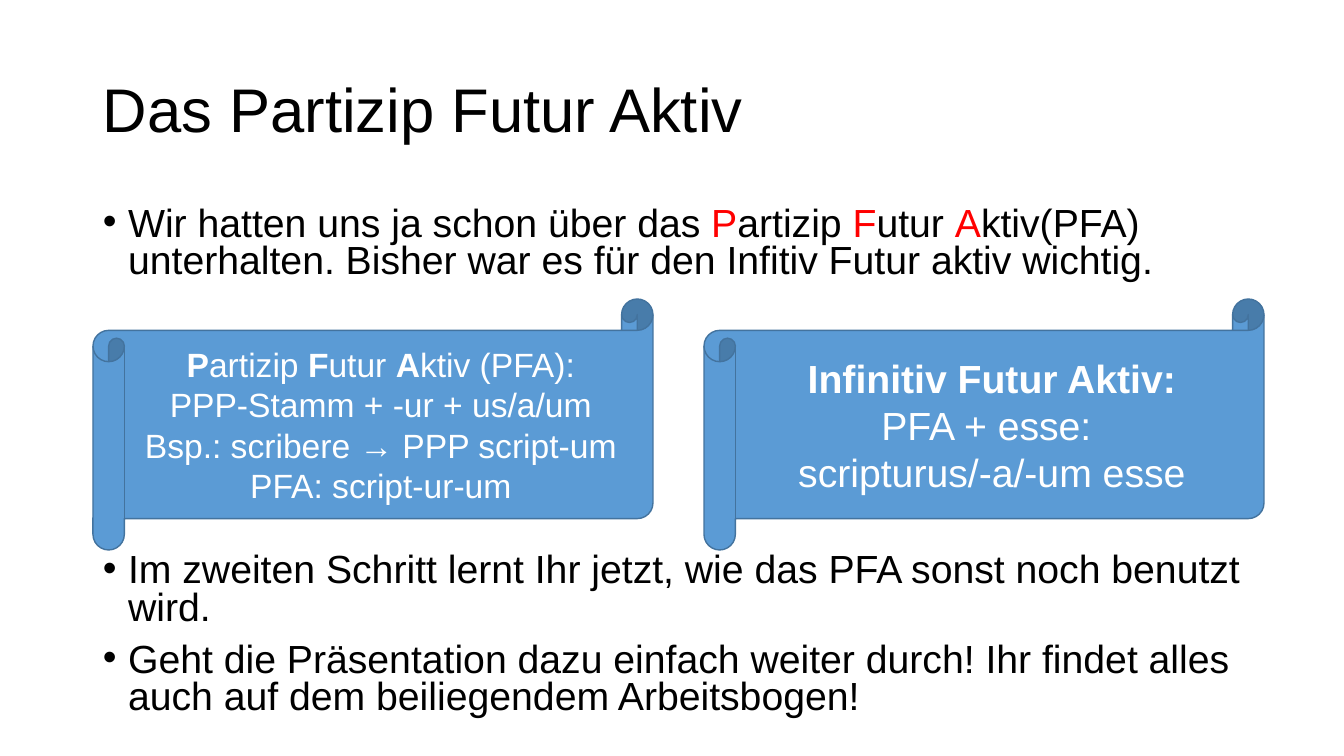
from lxml import etree
from pptx import Presentation
from pptx.dml.color import RGBColor
from pptx.enum.shapes import MSO_SHAPE
from pptx.enum.text import MSO_ANCHOR, PP_ALIGN
from pptx.oxml.ns import qn
from pptx.util import Emu, Pt

SCROLL = MSO_SHAPE.HORIZONTAL_SCROLL
TOP, MIDDLE = MSO_ANCHOR.TOP, MSO_ANCHOR.MIDDLE
LEFT, CENTER = PP_ALIGN.LEFT, PP_ALIGN.CENTER
EMU_PER_PX = 914400 / 100.8
COLORS = {
    "text": "000000",
    "accent": "FF0000",
    "scroll": "5B9BD5",
    "outline": "43739E",
    "scroll_text": "FFFFFF",
}


def px(value):
    return Emu(round(value * EMU_PER_PX))


def rgb(name):
    return RGBColor.from_string(COLORS[name])


def write_text(paragraph, text, *, size, color="text", accent=None, align=LEFT,
               spacing=1.0, before=0):
    """Text between asterisks takes the accent colour, or bold without one."""
    paragraph.alignment = align
    paragraph.line_spacing = spacing
    paragraph.space_before = Pt(before)
    for index, part in enumerate(text.split("*")):
        if not part:
            continue
        marked = index % 2 == 1
        run = paragraph.add_run()
        run.text = part
        run.font.name = "Arial"
        run.font.size = Pt(size)
        run.font.bold = marked and accent is None
        run.font.color.rgb = rgb(accent if marked and accent else color)


class SlideBuilder:
    def __init__(self, presentation):
        self.slide = presentation.slides.add_slide(presentation.slide_layouts[6])

    def fill_frame(self, shape, lines, anchor):
        frame = shape.text_frame
        frame.word_wrap = True
        frame.vertical_anchor = anchor
        for index, (text, style) in enumerate(lines):
            paragraph = frame.paragraphs[0] if index == 0 else frame.add_paragraph()
            write_text(paragraph, text, **style)
        return frame

    def text_box(self, left, top, width, height, lines, anchor=TOP):
        shape = self.slide.shapes.add_textbox(px(left), px(top), px(width), px(height))
        return self.fill_frame(shape, lines, anchor)

    def bullet_list(self, left, top, width, height, lines):
        frame = self.text_box(left, top, width, height, lines)
        for paragraph in frame.paragraphs:
            properties = paragraph._p.get_or_add_pPr()
            properties.set("marL", "228600")
            properties.set("indent", "-228600")
            etree.SubElement(properties, qn("a:buFont"), typeface="Arial")
            etree.SubElement(properties, qn("a:buChar"), char="•")

    def scroll(self, left, top, width, height, texts, size):
        shape = self.slide.shapes.add_shape(SCROLL, px(left), px(top), px(width), px(height))
        shape.shadow.inherit = False
        shape.fill.solid()
        shape.fill.fore_color.rgb = rgb("scroll")
        shape.line.color.rgb = rgb("outline")
        shape.line.width = Pt(1)
        style = {"size": size, "color": "scroll_text", "align": CENTER}
        self.fill_frame(shape, [(text, style) for text in texts], MIDDLE)


def main():
    presentation = Presentation()
    presentation.slide_width = px(1344)
    presentation.slide_height = px(756)
    builder = SlideBuilder(presentation)

    builder.text_box(93, 40, 1159, 146, [
        ("Das Partizip Futur Aktiv", {"size": 44, "spacing": 0.9}),
    ], MIDDLE)

    bullet = {"size": 28, "spacing": 0.8, "before": 10, "accent": "accent"}
    builder.bullet_list(93, 202, 1159, 544, [
        ("Wir hatten uns ja schon über das *P*artizip *F*utur *A*ktiv(PFA) "
         "unterhalten. Bisher war es für den Infitiv Futur aktiv wichtig.", bullet),
        ("Im zweiten Schritt lernt Ihr jetzt, wie das PFA sonst noch benutzt wird.",
         {**bullet, "before": 194}),
        ("Geht die Präsentation dazu einfach weiter durch! Ihr findet alles "
         "auch auf dem beiliegendem Arbeitsbogen!", bullet),
    ])

    scrolls = [
        (24, ["*P*artizip *F*utur *A*ktiv (PFA):", "PPP-Stamm + -ur + us/a/um",
              "Bsp.: scribere → PPP script-um", "PFA: script-ur-um"]),
        (28, ["*Infinitiv Futur Aktiv:*", "PFA + esse: ", "scripturus/-a/-um esse"]),
    ]
    for column, (size, texts) in enumerate(scrolls):
        builder.scroll(93 + column * 611, 299, 560, 251, texts, size)

    presentation.save("out.pptx")


if __name__ == "__main__":
    main()
